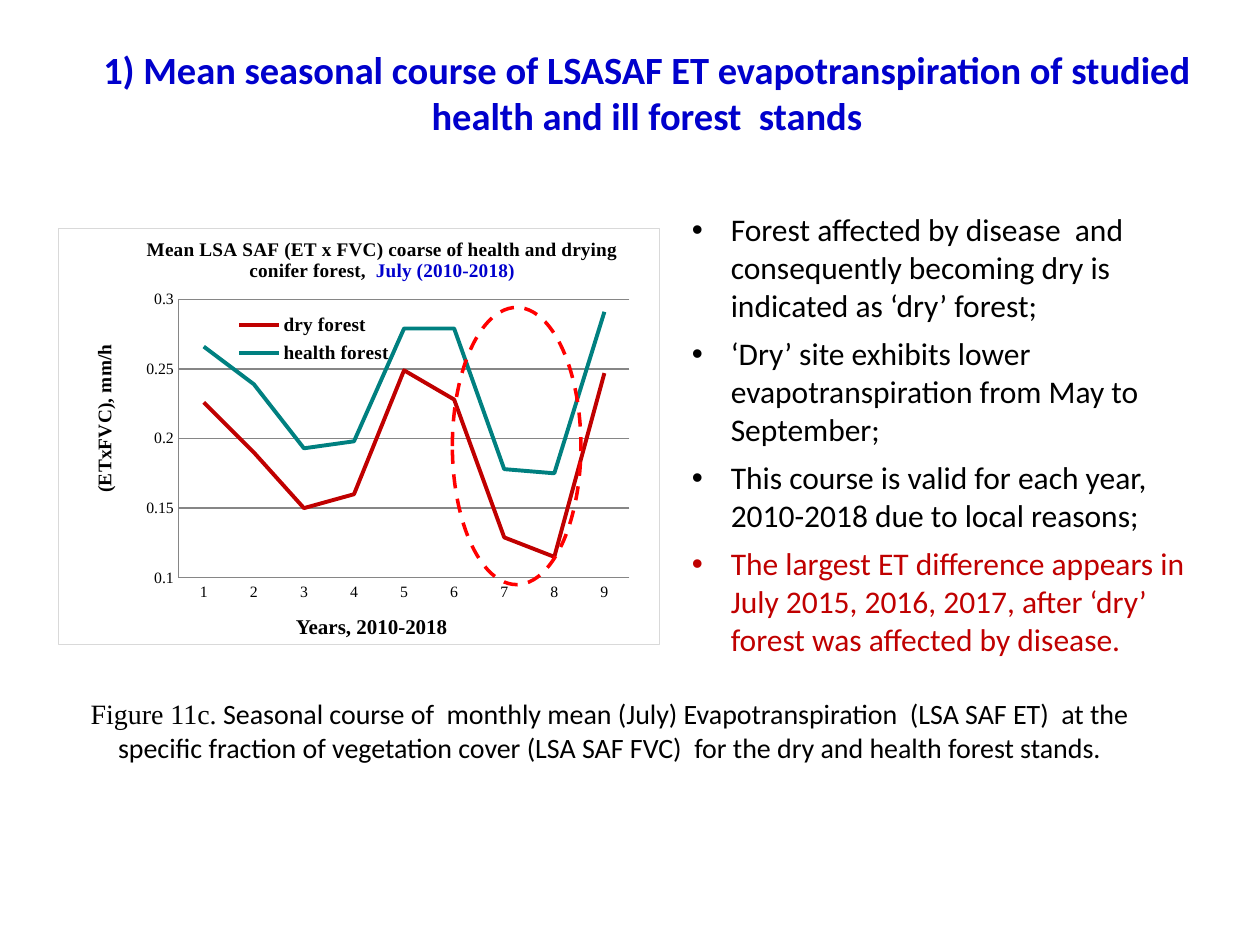
from pptx import Presentation
from pptx.chart.data import CategoryChartData
from pptx.dml.color import RGBColor
from pptx.enum.chart import XL_CHART_TYPE, XL_LEGEND_POSITION, XL_MARKER_STYLE, XL_TICK_MARK
from pptx.enum.dml import MSO_LINE
from pptx.enum.shapes import MSO_SHAPE
from pptx.enum.text import MSO_ANCHOR, MSO_AUTO_SIZE, PP_ALIGN
from pptx.oxml import parse_xml
from pptx.oxml.ns import nsdecls, qn
from pptx.util import Inches, Pt

BLACK = RGBColor(0x00, 0x00, 0x00)
BLUE = RGBColor(0x00, 0x00, 0xCC)
DARK_RED = RGBColor(0xC0, 0x00, 0x00)
RED = RGBColor(0xFF, 0x00, 0x00)
TEAL = RGBColor(0x00, 0x80, 0x80)
GRAY = RGBColor(0x86, 0x86, 0x86)
SANS, SERIF = "Calibri", "Times New Roman"

TITLE = "1) Mean seasonal course of LSASAF ET evapotranspiration of studied health and ill forest  stands"
FINDINGS = [
    ("Forest affected by disease  and consequently becoming dry is indicated as ‘dry’ forest;", BLACK),
    ("‘Dry’ site exhibits lower evapotranspiration from May to September;", BLACK),
    ("This course is valid for each year, 2010-2018 due to local reasons;", BLACK),
    ("The largest ET difference appears in July 2015, 2016, 2017, after ‘dry’ forest was affected by disease.",
     DARK_RED),
]
CHART_TITLE = [
    ("Mean LSA SAF (ET x FVC) coarse of health and drying conifer forest,  ", BLACK),
    ("July (2010-2018)", BLUE),
]
VALUE_TITLE = "(ETxFVC), mm/h"
YEARS_LABEL = "Years, 2010-2018"
SERIES = [
    ("dry forest", [0.226, 0.19, 0.15, 0.16, 0.249, 0.228, 0.129, 0.115, 0.247], DARK_RED),
    ("health forest", [0.266, 0.239, 0.193, 0.198, 0.279, 0.279, 0.178, 0.175, 0.291], TEAL),
]
CAPTION = [
    ("Figure 11c.", SERIF),
    (" Seasonal course of  monthly mean (July) Evapotranspiration  (LSA SAF ET)  at the specific fraction "
     "of vegetation cover (LSA SAF FVC)  for the dry and health forest stands.", SANS),
]


def inches(*lengths):
    return [Inches(length) for length in lengths]


def set_font(font, name, size, color=BLACK, bold=False):
    font.name, font.size, font.bold = name, Pt(size), bold
    font.color.rgb = color


def place(shape, *box):
    shape.left, shape.top, shape.width, shape.height = inches(*box)


def set_layout(element, x, y, width=None, height=None, inner=False):
    old = element.find(qn("c:layout"))
    if old is not None:
        element.remove(old)
    values = [("layoutTarget", "inner")] if inner else []
    values += [("xMode", "edge"), ("yMode", "edge"), ("x", x), ("y", y)]
    values += [("w", width), ("h", height)] if width else []
    parts = "".join(f'<c:{tag} val="{value}"/>' for tag, value in values)
    layout = parse_xml(f'<c:layout {nsdecls("c")}><c:manualLayout>{parts}</c:manualLayout></c:layout>')
    overlay = element.find(qn("c:overlay"))
    if overlay is None:
        element.insert(0, layout)
    else:
        overlay.addprevious(layout)


def add_title(slide):
    title = slide.shapes.title
    place(title, 0.51, 0.29, 9.25, 0.88)
    frame = title.text_frame
    frame.text = TITLE
    frame.auto_size = MSO_AUTO_SIZE.NONE
    frame.vertical_anchor = MSO_ANCHOR.MIDDLE
    paragraph = frame.paragraphs[0]
    paragraph.alignment = PP_ALIGN.CENTER
    set_font(paragraph.font, SANS, 22, BLUE, True)


def add_findings(slide):
    body = slide.placeholders[1]
    place(body, 5.39, 1.62, 4.14, 3.69)
    frame = body.text_frame
    frame.text = "\n".join(text for text, color in FINDINGS)
    frame.auto_size = MSO_AUTO_SIZE.NONE
    for index, (paragraph, (text, color)) in enumerate(zip(frame.paragraphs, FINDINGS)):
        properties = paragraph._p.get_or_add_pPr()
        properties.set("marL", str(Inches(0.31)))
        properties.set("indent", str(Inches(-0.31)))
        paragraph.space_before = Pt(6 if index else 0)
        set_font(paragraph.font, SANS, 18, color)


def add_chart(slide):
    data = CategoryChartData()
    data.categories = [str(number) for number in range(1, 10)]
    for name, values, color in SERIES:
        data.add_series(name, values)
    chart = slide.shapes.add_chart(XL_CHART_TYPE.LINE, *inches(0.46, 1.81, 4.78, 3.31), data).chart
    set_font(chart.font, SERIF, 10)
    chart.plots[0].vary_by_categories = False
    for series, (name, values, color) in zip(chart.plots[0].series, SERIES):
        series.smooth = False
        series.marker.style = XL_MARKER_STYLE.NONE
        series.format.line.color.rgb = color
        series.format.line.width = Pt(2.25)

    paragraph = chart.chart_title.text_frame.paragraphs[0]
    for text, color in CHART_TITLE:
        run = paragraph.add_run()
        run.text = text
        set_font(run.font, SERIF, 11, color, True)

    value_axis = chart.value_axis
    value_axis.minimum_scale, value_axis.maximum_scale, value_axis.major_unit = 0.1, 0.3, 0.05
    value_axis.tick_labels.number_format = "General"
    value_axis.tick_labels.number_format_is_linked = False
    value_axis.major_gridlines.format.line.color.rgb = GRAY
    value_axis.axis_title.text_frame.text = VALUE_TITLE
    set_font(value_axis.axis_title.text_frame.paragraphs[0].font, SERIF, 11, BLACK, True)
    for axis in (chart.category_axis, value_axis):
        axis.major_tick_mark = axis.minor_tick_mark = XL_TICK_MARK.NONE
        axis.format.line.color.rgb = GRAY
        set_font(axis.tick_labels.font, SERIF, 9)

    chart.has_legend = True
    chart.legend.position = XL_LEGEND_POSITION.RIGHT
    chart.legend.include_in_layout = False
    set_font(chart.legend.font, SERIF, 11, BLACK, True)

    set_layout(chart.chart_title._element, 0.14, 0.01)
    set_layout(value_axis.axis_title._element, 0.05, 0.27)
    set_layout(chart.legend._element, 0.29, 0.19, 0.27, 0.15)
    chart_space = chart._chartSpace
    set_layout(chart_space.chart.plotArea, 0.2, 0.17, 0.75, 0.67, inner=True)
    chart_space.chart.addnext(parse_xml(
        f'<c:spPr {nsdecls("c", "a")}><a:noFill/><a:ln w="{Pt(0.75)}"><a:solidFill>'
        '<a:srgbClr val="D9D9D9"/></a:solidFill></a:ln></c:spPr>'))


def add_highlight(slide):
    ellipse = slide.shapes.add_shape(MSO_SHAPE.OVAL, *inches(3.59, 2.44, 1.02, 2.2))
    ellipse.shadow.inherit = False
    ellipse.fill.background()
    ellipse.line.color.rgb = RED
    ellipse.line.width = Pt(2)
    ellipse.line.dash_style = MSO_LINE.DASH


def add_labels(slide):
    years = slide.shapes.add_textbox(*inches(2.25, 4.82, 1.42, 0.3)).text_frame
    years.word_wrap = False
    years.text = YEARS_LABEL
    set_font(years.paragraphs[0].font, SERIF, 12, BLACK, True)

    caption = slide.shapes.add_textbox(*inches(0.51, 5.48, 8.66, 0.64)).text_frame
    caption.word_wrap = True
    paragraph = caption.paragraphs[0]
    paragraph.alignment = PP_ALIGN.CENTER
    for text, font_name in CAPTION:
        run = paragraph.add_run()
        run.text = text
        set_font(run.font, font_name, 16)


def main():
    """Build the forest evapotranspiration slide."""
    presentation = Presentation()
    presentation.slide_width, presentation.slide_height = inches(10, 7.5)
    slide = presentation.slides.add_slide(presentation.slide_layouts[1])
    add_title(slide)
    add_findings(slide)
    add_chart(slide)
    add_highlight(slide)
    add_labels(slide)
    presentation.save("out.pptx")


if __name__ == "__main__":
    main()
